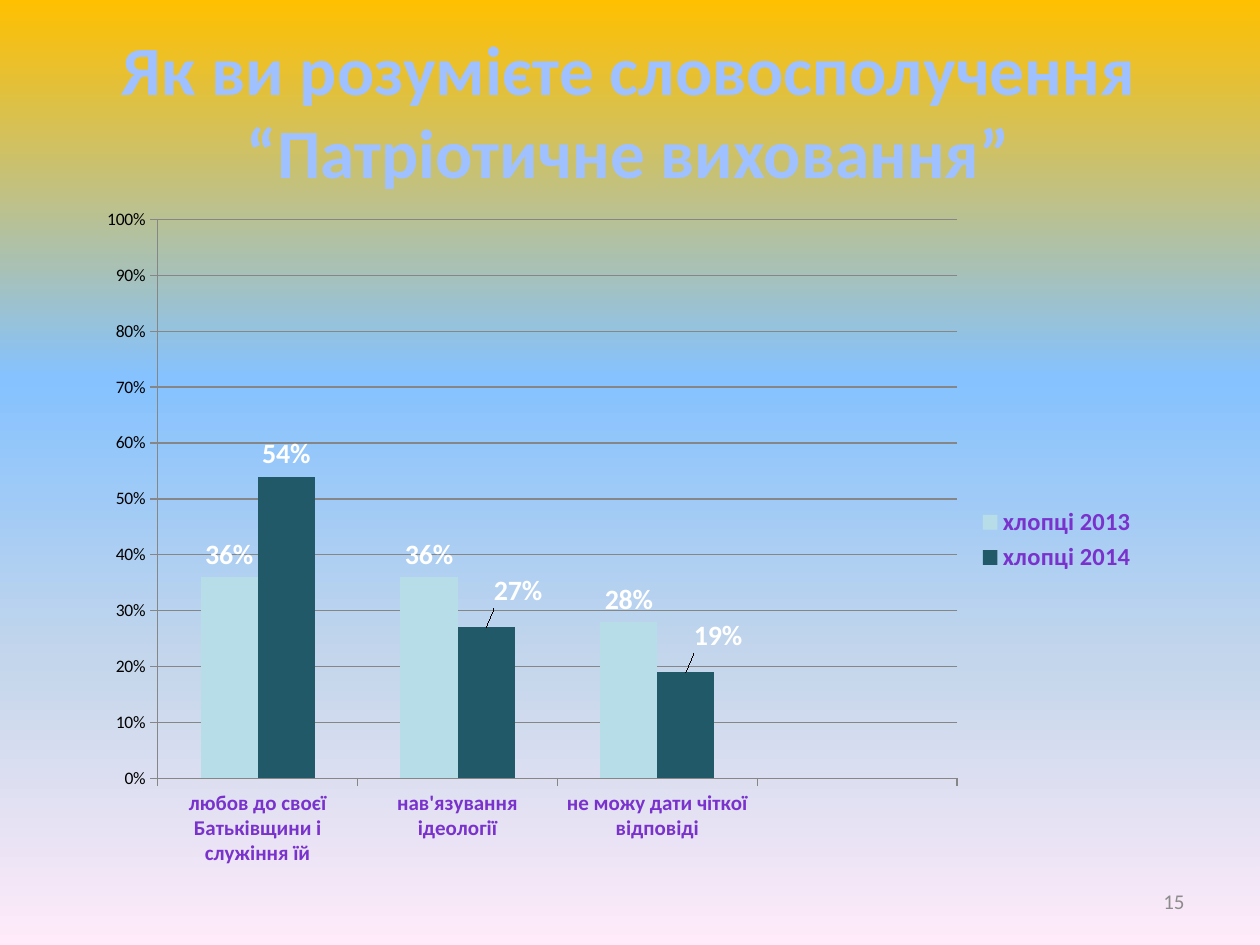
from lxml.etree import SubElement
from pptx import Presentation
from pptx.chart.data import CategoryChartData
from pptx.dml.color import RGBColor
from pptx.enum.chart import XL_CHART_TYPE, XL_LABEL_POSITION, XL_LEGEND_POSITION, XL_TICK_MARK
from pptx.enum.text import MSO_ANCHOR, PP_ALIGN
from pptx.oxml.ns import qn
from pptx.util import Inches, Pt

FONT = "Calibri"
COLORS = {
    "title": "A0C1FF",
    "label": "7A32CC",
    "value": "FFFFFF",
    "axis": "000000",
    "line": "868686",
    "number": "8C8C8C",
}
BACKGROUND_STOPS = [(0, "FFC000"), (40, "85C2FF"), (70, "C4D6EB"), (100, "FFEBFA")]
CATEGORIES = [
    "любов до своєї Батьківщини і служіння їй",
    "нав'язування ідеології",
    "не можу дати чіткої відповіді",
    "",
]
SERIES = [
    ("хлопці 2013", (0.36, 0.36, 0.28, None), "B7DEE8"),
    ("хлопці 2014", (0.54, 0.27, 0.19, None), "215968"),
]
# Point index in the second series: label shift as a share of the chart size
LABEL_SHIFTS = {1: (0.03, -0.02), 2: (0.03, -0.02)}
PLOT_AREA = {"x": 0.07, "y": 0.03, "w": 0.75, "h": 0.82}


def style_font(font, size, color, bold=False):
    font.name = FONT
    font.size = Pt(size)
    font.bold = bold
    font.color.rgb = RGBColor.from_string(COLORS[color])


def set_background(slide):
    fill = slide.background.fill
    fill.gradient()
    fill.gradient_angle = 270
    stop_list = slide.element.find(".//" + qn("a:gsLst"))
    for stop in list(stop_list):
        stop_list.remove(stop)
    for position, color in BACKGROUND_STOPS:
        stop = SubElement(stop_list, qn("a:gs"), pos=str(position * 1000))
        SubElement(stop, qn("a:srgbClr"), val=color)


def add_text(slide, text, box, alignment, size, color, bold=False):
    shape = slide.shapes.add_textbox(*map(Inches, box))
    frame = shape.text_frame
    frame.word_wrap = True
    frame.vertical_anchor = MSO_ANCHOR.MIDDLE
    frame.text = text
    paragraph = frame.paragraphs[0]
    paragraph.alignment = alignment
    style_font(paragraph.runs[0].font, size, color, bold)


def add_manual_layout(layout, values, inner=False):
    manual = SubElement(layout, qn("c:manualLayout"))
    if inner:
        SubElement(manual, qn("c:layoutTarget"), val="inner")
        for side in "xy":
            SubElement(manual, qn(f"c:{side}Mode"), val="edge")
    for name, value in values.items():
        SubElement(manual, qn(f"c:{name}"), val=str(value))


def place_plot_area(chart):
    plot_area = chart.element.find(".//" + qn("c:plotArea"))
    layout = plot_area.find(qn("c:layout"))
    if layout is None:
        layout = SubElement(plot_area, qn("c:layout"))
        plot_area.insert(0, layout)
    add_manual_layout(layout, PLOT_AREA, inner=True)


def style_axes(chart):
    for axis in (chart.category_axis, chart.value_axis):
        axis.major_tick_mark = XL_TICK_MARK.OUTSIDE
        axis.minor_tick_mark = XL_TICK_MARK.NONE
        axis.format.line.color.rgb = RGBColor.from_string(COLORS["line"])
    style_font(chart.category_axis.tick_labels.font, 12, "label", True)

    value_axis = chart.value_axis
    value_axis.minimum_scale, value_axis.maximum_scale = 0, 1
    value_axis.major_unit = 0.1
    value_axis.has_major_gridlines = True
    value_axis.major_gridlines.format.line.color.rgb = RGBColor.from_string(COLORS["line"])
    value_axis.tick_labels.number_format = "0%"
    value_axis.tick_labels.number_format_is_linked = False
    style_font(value_axis.tick_labels.font, 10, "axis")


def style_series(series, color):
    series.format.fill.solid()
    series.format.fill.fore_color.rgb = RGBColor.from_string(color)
    labels = series.data_labels
    labels.show_value = True
    labels.number_format = "0%"
    labels.number_format_is_linked = False
    labels.position = XL_LABEL_POSITION.OUTSIDE_END
    style_font(labels.font, 16, "value", True)


def shift_labels(series):
    for index, (x, y) in LABEL_SHIFTS.items():
        label = series.points[index].data_label
        style_font(label.font, 16, "value", True)
        label.position = XL_LABEL_POSITION.OUTSIDE_END
        element = series.data_labels._element.find(f"{qn('c:dLbl')}[{index}]")
        layout = SubElement(element, qn("c:layout"))
        element.insert(1, layout)
        add_manual_layout(layout, {"x": x, "y": y})


def add_survey_chart(slide):
    data = CategoryChartData(number_format="0%")
    data.categories = CATEGORIES
    for name, values, _ in SERIES:
        data.add_series(name, values)
    box = map(Inches, (0.66, 1.58, 8.46, 5.41))
    chart = slide.shapes.add_chart(XL_CHART_TYPE.COLUMN_CLUSTERED, *box, data).chart
    style_font(chart.font, 10, "axis")
    chart.has_title = False
    chart.has_legend = True
    chart.legend.position = XL_LEGEND_POSITION.RIGHT
    chart.legend.include_in_layout = False
    style_font(chart.legend.font, 14, "label", True)

    plot = chart.plots[0]
    plot.vary_by_categories = False
    plot.gap_width = 150
    plot.overlap = 0
    for series, (_, _, color) in zip(plot.series, SERIES):
        style_series(series, color)
    shift_labels(plot.series[1])
    style_axes(chart)
    place_plot_area(chart)


def main():
    presentation = Presentation()
    presentation.slide_width = Inches(10)
    presentation.slide_height = Inches(7.5)
    slide = presentation.slides.add_slide(presentation.slide_layouts[6])
    set_background(slide)
    add_text(slide, "Як ви розумієте словосполучення “Патріотичне виховання”",
             (0.49, 0.24, 9, 1.25), PP_ALIGN.CENTER, 39.6, "title", True)
    add_survey_chart(slide)
    add_text(slide, "15", (7.17, 6.95, 2.33, 0.4), PP_ALIGN.RIGHT, 12, "number")
    presentation.save("out.pptx")


if __name__ == "__main__":
    main()
